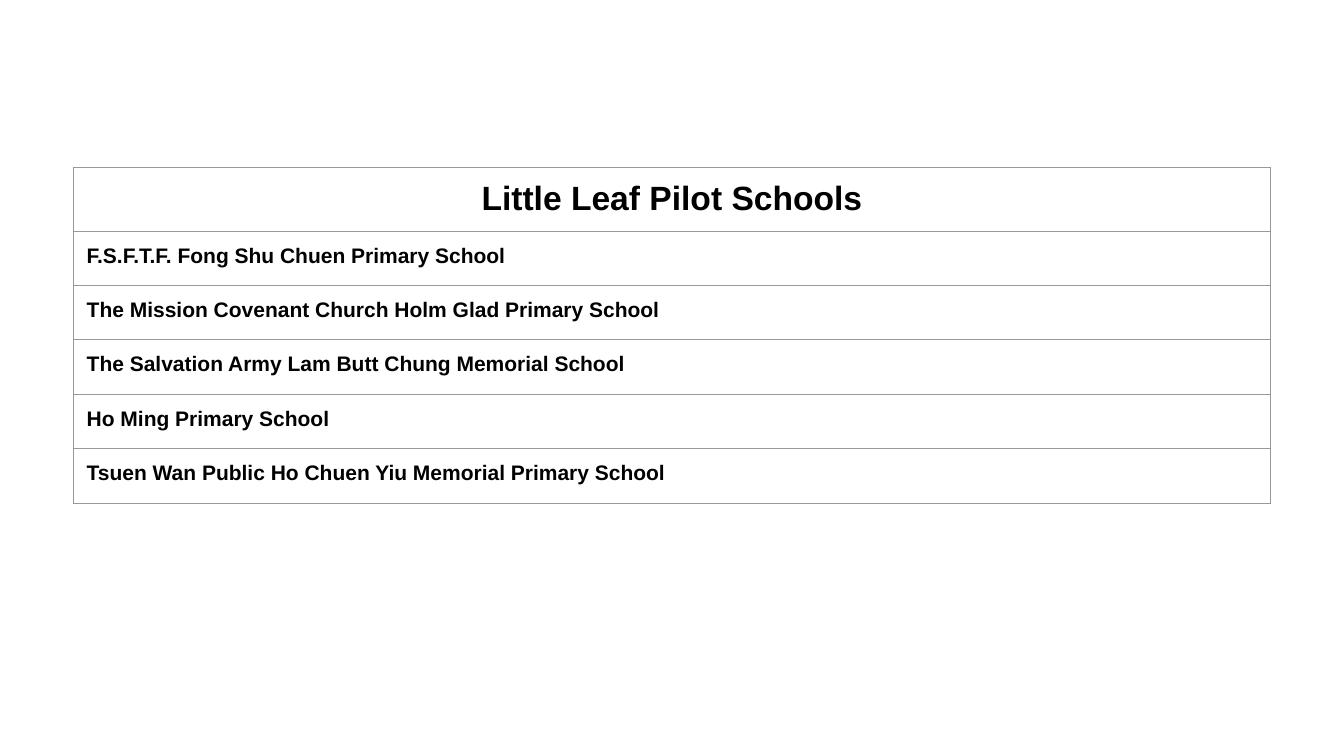
import dataclasses

import pptx
import pptx.dml.color
import pptx.enum.text
import pptx.oxml
import pptx.oxml.ns
import pptx.util
from pptx.util import Inches


@dataclasses.dataclass(frozen=True)
class Theme:
    font: str = "Arial"
    text: str = "000000"
    background: str = "FFFFFF"
    border: str = "999999"
    border_width: float = 0.75
    heading_size: int = 24
    school_size: int = 15


THEME = Theme()
HEADING = "Little Leaf Pilot Schools"
SCHOOLS = [
    "F.S.F.T.F. Fong Shu Chuen Primary School",
    "The Mission Covenant Church Holm Glad Primary School",
    "The Salvation Army Lam Butt Chung Memorial School",
    "Ho Ming Primary School",
    "Tsuen Wan Public Ho Chuen Yiu Memorial Primary School",
]
COLUMN_WIDTHS = [3.5, 8.37]
ROW_HEIGHT = 0.54
CELL_MARGIN = 0.13


def apply_format(target, values):
    for name, value in values.items():
        setattr(target, name, value)


def draw_borders(cell):
    properties = cell._tc.get_or_add_tcPr()
    width = pptx.util.Pt(THEME.border_width)
    for side in ("lnL", "lnR", "lnT", "lnB"):
        properties.append(pptx.oxml.parse_xml(
            f'<a:{side} {pptx.oxml.ns.nsdecls("a")} w="{width}">'
            f'<a:solidFill><a:srgbClr val="{THEME.border}"/></a:solidFill>'
            f'</a:{side}>'))


def format_cell(cell):
    sides = ("margin_left", "margin_right", "margin_top", "margin_bottom")
    apply_format(cell, dict.fromkeys(sides, Inches(CELL_MARGIN)))
    draw_borders(cell)
    cell.fill.solid()
    cell.fill.fore_color.rgb = pptx.dml.color.RGBColor.from_string(THEME.background)


def write_row(cell, text, size, alignment):
    paragraph = cell.text_frame.paragraphs[0]
    paragraph.alignment = alignment
    run = paragraph.add_run()
    run.text = text
    apply_format(run.font, {"name": THEME.font, "size": pptx.util.Pt(size), "bold": True})
    run.font.color.rgb = pptx.dml.color.RGBColor.from_string(THEME.text)


def add_school_table(slide, left, top):
    row_count = 1 + len(SCHOOLS)
    schools = slide.shapes.add_table(
        row_count, len(COLUMN_WIDTHS), Inches(left), Inches(top),
        Inches(sum(COLUMN_WIDTHS)), Inches(ROW_HEIGHT * row_count)).table
    apply_format(schools, {"first_row": False, "horz_banding": False})
    for column, width in zip(schools.columns, COLUMN_WIDTHS):
        column.width = Inches(width)

    # Heading row, then one full-width row per school
    align = pptx.enum.text.PP_ALIGN
    lines = [(HEADING, THEME.heading_size, align.CENTER)]
    lines += [(school, THEME.school_size, align.LEFT) for school in SCHOOLS]
    for index, line in enumerate(lines):
        schools.rows[index].height = Inches(ROW_HEIGHT)
        first, last = schools.cell(index, 0), schools.cell(index, 1)
        format_cell(first)
        format_cell(last)
        first.merge(last)
        write_row(first, *line)


def main():
    presentation = pptx.Presentation()
    apply_format(presentation, {"slide_width": Inches(13.33), "slide_height": Inches(7.5)})
    slide = presentation.slides.add_slide(presentation.slide_layouts.get_by_name("Blank"))
    add_school_table(slide, left=0.73, top=1.66)
    presentation.save("out.pptx")


if __name__ == "__main__":
    main()
